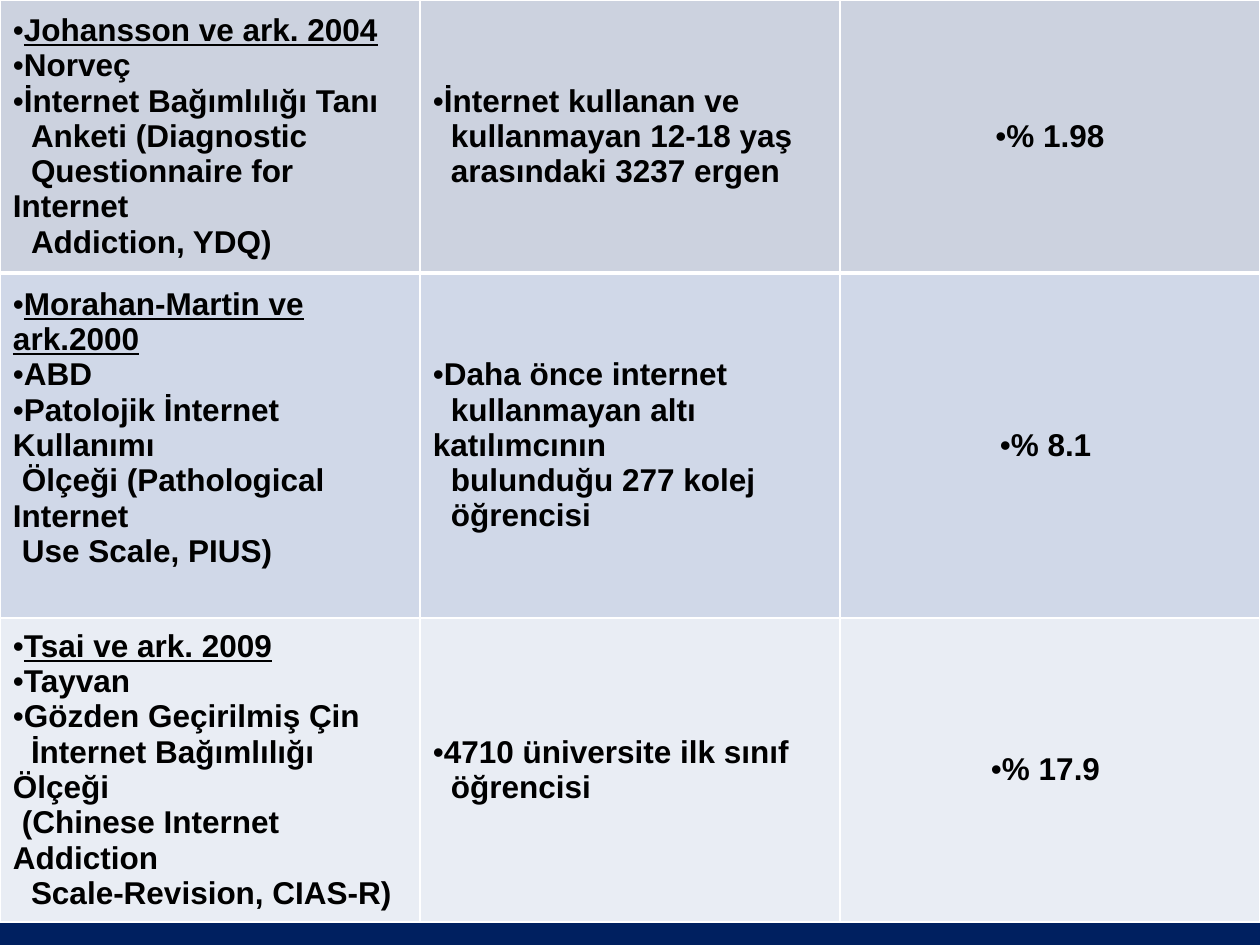
from lxml import etree
from pptx import Presentation
from pptx.dml.color import RGBColor
from pptx.enum.text import MSO_ANCHOR, PP_ALIGN
from pptx.oxml.ns import qn
from pptx.util import Emu, Pt

SCALE = 914400 / 126
MIDDLE = MSO_ANCHOR.MIDDLE
LEFT, CENTER = PP_ALIGN.LEFT, PP_ALIGN.CENTER

NAVY = RGBColor(0x00, 0x20, 0x60)
WHITE = RGBColor(0xFF, 0xFF, 0xFF)
BLACK = RGBColor(0x00, 0x00, 0x00)
BAND_DARK = RGBColor(0xD0, 0xD8, 0xE8)
BAND_LIGHT = RGBColor(0xE9, 0xED, 0xF4)

FONT = "Arial"
TEXT_SIZE = 18
SPACE = 9  # width of one indent step
MARGIN_X, MARGIN_Y = 13, 6
COLUMN_WIDTH = 420

# Each line is (indent steps, text); None marks a bulleted line.
STUDIES = [
    dict(
        height=273, fill=WHITE, opacity=80, bottom_line=3, space_below=0,
        study=[(None, "Johansson ve ark. 2004"), (None, "Norveç"),
               (None, "İnternet Bağımlılığı Tanı"), (2, "Anketi (Diagnostic"),
               (2, "Questionnaire for Internet"), (2, "Addiction, YDQ)")],
        sample=[(None, "İnternet kullanan ve"), (2, "kullanmayan 12-18 yaş"),
                (2, "arasındaki 3237 ergen")],
        rate="% 1.98",
    ),
    dict(
        height=345, fill=BAND_DARK, opacity=100, bottom_line=1, space_below=35,
        study=[(None, "Morahan-Martin ve ark.2000"), (None, "ABD"),
               (None, "Patolojik İnternet Kullanımı"),
               (1, "Ölçeği (Pathological Internet"), (1, "Use Scale, PIUS)")],
        sample=[(None, "Daha önce internet"), (2, "kullanmayan altı katılımcının"),
                (2, "bulunduğu 277 kolej"), (2, "öğrencisi")],
        rate="% 8.1 ",
    ),
    dict(
        height=304, fill=BAND_LIGHT, opacity=100, bottom_line=1, space_below=0,
        study=[(None, "Tsai ve ark. 2009"), (None, "Tayvan"),
               (None, "Gözden Geçirilmiş Çin"), (2, "İnternet Bağımlılığı Ölçeği"),
               (1, "(Chinese Internet Addiction"), (2, "Scale-Revision, CIAS-R)")],
        sample=[(None, "4710 üniversite ilk sınıf"), (2, "öğrencisi")],
        rate="% 17.9 ",
    ),
]


def px(length):
    return Emu(round(length * SCALE))


def set_fill(cell, color, opacity):
    cell.fill.solid()
    cell.fill.fore_color.rgb = color
    if opacity < 100:
        rgb = cell._tc.tcPr.find(".//" + qn("a:srgbClr"))
        etree.SubElement(rgb, qn("a:alpha")).set("val", str(opacity * 1000))


def set_borders(cell, top, bottom):
    """Draw white borders; side lines are 1 pt wide."""
    widths = {"a:lnL": 1, "a:lnR": 1, "a:lnT": top, "a:lnB": bottom}
    for place, (tag, width) in enumerate(widths.items()):
        line = etree.Element(qn(tag), w=str(Pt(width)))
        solid = etree.SubElement(line, qn("a:solidFill"))
        etree.SubElement(solid, qn("a:srgbClr")).set("val", str(WHITE))
        cell._tc.tcPr.insert(place, line)


def write_lines(cell, lines, align=LEFT, underline_first=False):
    frame = cell.text_frame
    for number, (steps, text) in enumerate(lines):
        paragraph = frame.add_paragraph() if number else frame.paragraphs[0]
        paragraph.alignment = align
        properties = paragraph._p.get_or_add_pPr()
        properties.set("marL", "0")
        properties.set("indent", str(px((steps or 0) * SPACE)))
        if steps is None:
            etree.SubElement(properties, qn("a:buFont")).set("typeface", FONT)
            etree.SubElement(properties, qn("a:buChar")).set("char", "•")
        else:
            etree.SubElement(properties, qn("a:buNone"))
        run = paragraph.add_run()
        run.text = text
        run.font.name = FONT
        run.font.size = Pt(TEXT_SIZE)
        run.font.bold = True
        run.font.underline = underline_first and number == 0
        run.font.color.rgb = BLACK


def add_study_table(slide, left, top):
    height = sum(entry["height"] for entry in STUDIES)
    table = slide.shapes.add_table(len(STUDIES), 3, px(left), px(top),
                                   px(3 * COLUMN_WIDTH), px(height)).table
    table.first_row = table.horz_banding = False
    for column in table.columns:
        column.width = px(COLUMN_WIDTH)
    line_above = 1
    for row, entry in zip(table.rows, STUDIES):
        row.height = px(entry["height"])
        study, sample, rate = row.cells
        for cell in (study, sample, rate):
            cell.vertical_anchor = MIDDLE
            cell.margin_left = cell.margin_right = px(MARGIN_X)
            cell.margin_top = cell.margin_bottom = px(MARGIN_Y)
            set_fill(cell, entry["fill"], entry["opacity"])
            set_borders(cell, line_above, entry["bottom_line"])
        study.margin_bottom = px(MARGIN_Y + entry["space_below"])
        write_lines(study, entry["study"], underline_first=True)
        write_lines(sample, entry["sample"])
        write_lines(rate, [(None, entry["rate"])], align=CENTER)
        line_above = entry["bottom_line"]


def main():
    deck = Presentation()
    deck.slide_width, deck.slide_height = px(1260), px(945)
    slide = deck.slides.add_slide(deck.slide_layouts[6])
    slide.background.fill.solid()
    slide.background.fill.fore_color.rgb = NAVY
    add_study_table(slide, 0, 0)
    deck.save("out.pptx")


if __name__ == "__main__":
    main()
